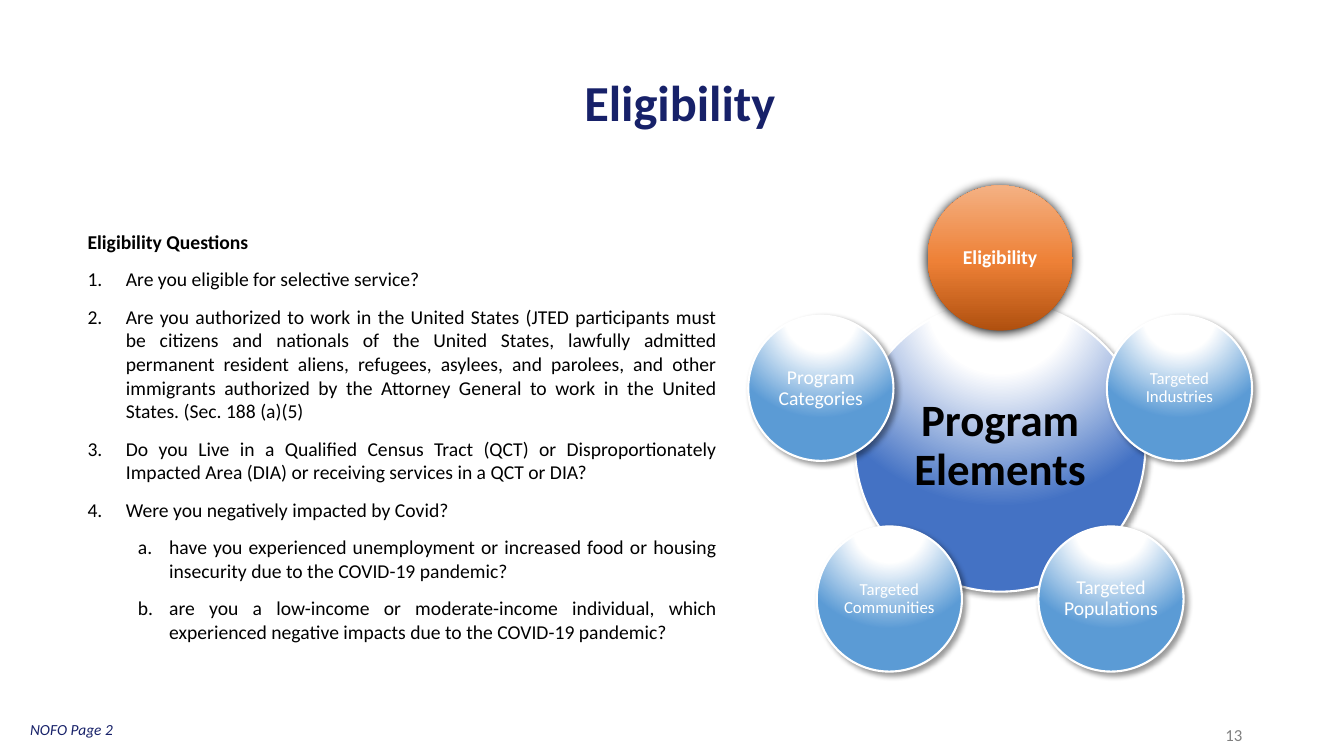
from math import cos, radians, sin

from lxml.etree import SubElement
from pptx import Presentation
from pptx.dml.color import RGBColor as Rgb
from pptx.enum.shapes import MSO_SHAPE as Kind
from pptx.enum.text import MSO_ANCHOR as Anchor, MSO_AUTO_SIZE as Auto, PP_ALIGN as Align
from pptx.oxml import parse_xml
from pptx.oxml.ns import nsdecls, qn
from pptx.util import Inches, Pt

HUES = {"navy": "172169", "gray": "808080", "black": "000000", "white": "FFFFFF",
        "blue": "4472C4", "sky": "5B9BD5", "rust": "B0500F", "amber": "EE8137", "peach": "F4B183"}
GLOW = '<a:path path="circle"><a:fillToRect l="50000" t="-80000" r="50000" b="180000"/></a:path>'
RISE = '<a:lin ang="16200000" scaled="0"/>'
HUB = (9.92, 4.43)
ORBIT = 1.87
SMALL = 1.44
NODES = [("Eligibility", 14), ("Targeted Industries", 12), ("Targeted Populations", 14),
         ("Targeted Communities", 12), ("Program Categories", 14)]
MAIN = {"num": "arabicPeriod", "ind": (0.38, -0.38)}
SUB = {"num": "alphaLcPeriod", "ind": (0.81, -0.31), "level": 1}
ASKS = [
    ("Eligibility Questions", {"bold": True}),
    ("Are you eligible for selective service?", MAIN),
    ("Are you authorized to work in the United States (JTED participants must be citizens and "
     "nationals of the United States, lawfully admitted permanent resident aliens, refugees, "
     "asylees, and parolees, and other immigrants authorized by the Attorney General to work in "
     "the United States. (Sec. 188 (a)(5)", MAIN),
    ("Do you Live in a Qualified Census Tract (QCT) or Disproportionately Impacted Area (DIA) "
     "or receiving services in a QCT or DIA?", MAIN),
    ("Were you negatively impacted by Covid?", MAIN),
    ("have you experienced unemployment or increased food or housing insecurity due to the "
     "COVID-19 pandemic?", SUB),
    ("are you a low-income or moderate-income individual, which experienced negative impacts "
     "due to the COVID-19 pandemic?", SUB),
]


def write(para, text, size=14, hue="black", bold=False, italic=False, align=Align.LEFT,
          lead=None, after=None, num=None, ind=None, level=0):
    """Fill a paragraph with formatted text."""
    para.level = level
    if num:
        props = para._p.get_or_add_pPr()
        props.set("marL", str(Inches(ind[0])))
        props.set("indent", str(Inches(ind[1])))
        SubElement(props, qn("a:buAutoNum"), type=num)
    para.alignment = align
    if lead:
        para.line_spacing = lead
    if after:
        para.space_after = Pt(after)
    run = para.add_run()
    run.text = text
    font = run.font
    font.name, font.size, font.bold, font.italic = "Calibri", Pt(size), bold, italic
    font.color.rgb = Rgb.from_string(HUES[hue])


class Deck:
    """Hold the style and the current slide."""

    def __init__(self):
        """Start a wide deck with one title-only slide."""
        self.show = Presentation()
        self.show.slide_width, self.show.slide_height = Inches(13.33), Inches(7.5)
        self.slide = self.show.slides.add_slide(self.show.slide_layouts[5])

    def title(self, text, box):
        """Place and format the title."""
        head = self.slide.shapes.title
        head.left, head.top, head.width, head.height = map(Inches, box)
        frame = head.text_frame
        frame.auto_size, frame.vertical_anchor = Auto.NONE, Anchor.MIDDLE
        write(frame.paragraphs[0], text, size=36, hue="navy", bold=True,
              align=Align.CENTER, lead=0.9)

    def text(self, box, items, anchor=Anchor.TOP, **style):
        """Add a text box of one or more paragraphs."""
        frame = self.slide.shapes.add_textbox(*map(Inches, box)).text_frame
        frame.word_wrap, frame.vertical_anchor = True, anchor
        for i, (words, extra) in enumerate(items):
            para = frame.add_paragraph() if i else frame.paragraphs[0]
            write(para, words, **{**style, **extra})

    def ball(self, mid, width, text, stops, path, shade, inset=0.02, edge=True, **style):
        """Add a shaded circle with a centred label."""
        left, top = (c - width / 2 for c in mid)
        ball = self.slide.shapes.add_shape(Kind.OVAL, *map(Inches, (left, top, width, width)))
        if edge:
            ball.line.color.rgb = Rgb.from_string(HUES["white"])
            ball.line.width = Pt(1.5)
        else:
            ball.line.fill.background()
        ball.shadow.inherit = False
        props = ball._element.spPr
        marks = "".join(f'<a:gs pos="{pos * 1000}"><a:srgbClr val="{HUES[hue]}"/></a:gs>'
                        for pos, hue in stops)
        props.insert(2, parse_xml(f'<a:gradFill {nsdecls("a")} rotWithShape="1">'
                                  f'<a:gsLst>{marks}</a:gsLst>{path}</a:gradFill>'))
        alpha, blur, dist, turn = shade
        props.find(qn("a:effectLst")).append(parse_xml(
            f'<a:outerShdw {nsdecls("a")} blurRad="{int(Pt(blur))}" dist="{int(Pt(dist))}" '
            f'dir="{turn * 60000}" rotWithShape="0"><a:srgbClr val="{HUES["black"]}">'
            f'<a:alpha val="{alpha * 1000}"/></a:srgbClr></a:outerShdw>'))
        frame = ball.text_frame
        frame.word_wrap, frame.vertical_anchor = True, Anchor.MIDDLE
        frame.margin_left = frame.margin_right = Inches(inset)
        frame.margin_top = frame.margin_bottom = Inches(inset)
        write(frame.paragraphs[0], text, align=Align.CENTER, lead=0.9, **style)

    def glass(self, mid, width, text, tint, **style):
        """Add a circle lit white from above."""
        stops = [(0, "white"), (35, "white"), (100, tint)]
        self.ball(mid, width, text, stops, GLOW, (40, 4, 3, 45), **style)

    def wheel(self):
        """Draw the hub and its ring of circles."""
        self.glass(HUB, 2 * SMALL, "Program Elements", "blue", inset=0.04, size=32, bold=True)
        for i, (name, size) in enumerate(NODES):
            turn = radians(360 / len(NODES) * i)
            mid = (HUB[0] + ORBIT * sin(turn), HUB[1] - ORBIT * cos(turn))
            if i:
                self.glass(mid, SMALL, name, "sky", size=size, hue="white")
            else:
                stops = [(0, "rust"), (48, "amber"), (100, "peach")]
                self.ball(mid, SMALL, name, stops, RISE, (100, 8.5, 1, 90), edge=False,
                          size=size, hue="white", bold=True)


def main():
    """Build and save the slide."""
    deck = Deck()
    deck.title("Eligibility ", (3.88, 0.74, 5.84, 0.61))
    deck.text((9.42, 7.09, 3, 0.4), [("13", {})], Anchor.MIDDLE,
              size=12, hue="gray", align=Align.RIGHT)
    deck.wheel()
    deck.text((0.77, 2.23, 6.44, 4.68), ASKS, align=Align.JUSTIFY, after=10)
    deck.text((0.2, 7.09, 2.33, 0.29), [("NOFO Page 2", {})],
              size=11, hue="navy", italic=True)
    deck.show.save("out.pptx")


if __name__ == "__main__":
    main()
